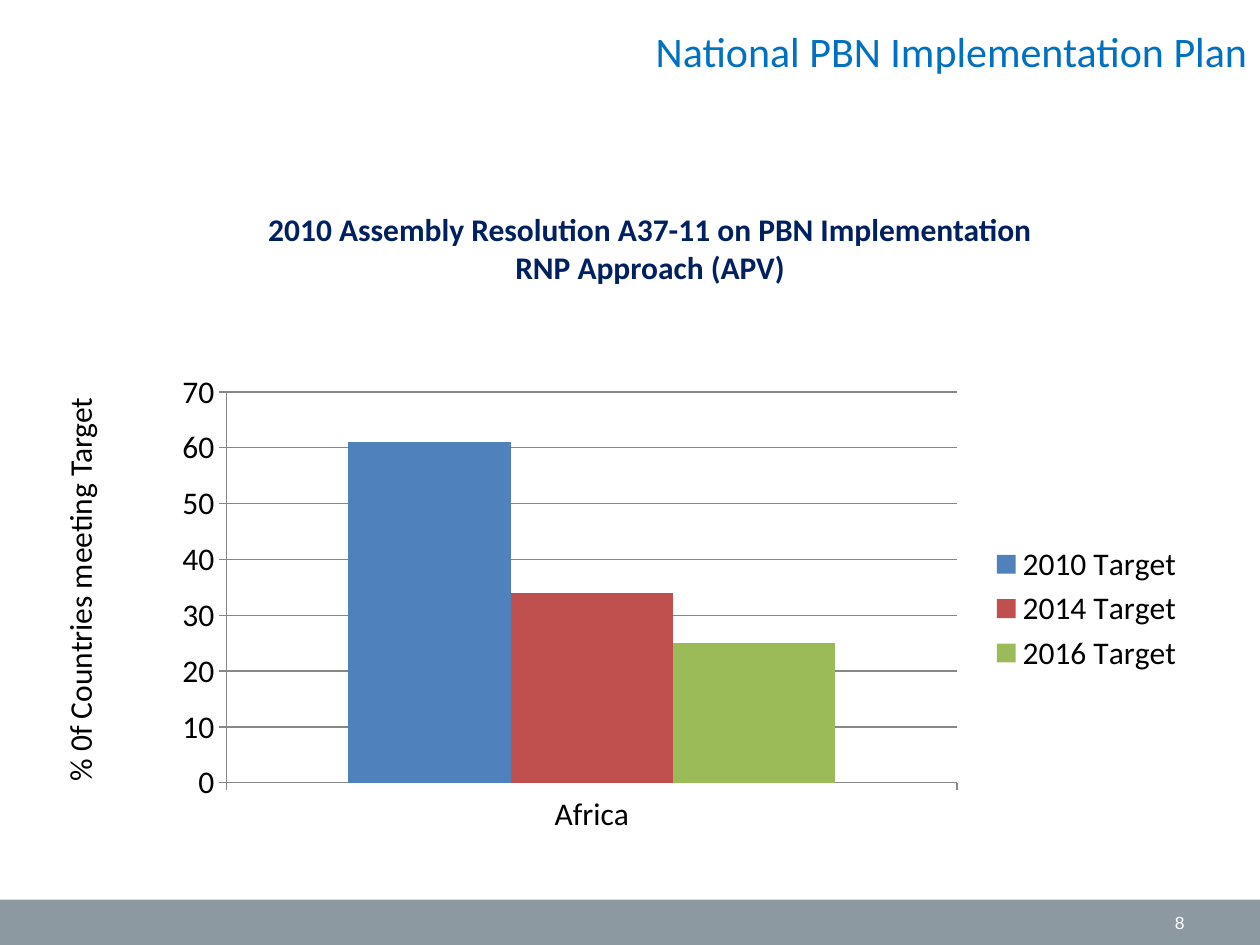
from lxml import etree
from pptx import Presentation
from pptx.chart.data import CategoryChartData as ChartData
from pptx.dml.color import RGBColor as RGB
from pptx.enum.chart import XL_CHART_TYPE as Kind, XL_LEGEND_POSITION as Side
from pptx.enum.chart import XL_TICK_MARK as Tick
from pptx.enum.shapes import MSO_SHAPE as Shape
from pptx.enum.text import MSO_ANCHOR as Anchor, PP_ALIGN as Align
from pptx.util import Inches, Pt

COLORS = {
    "title": "0070C0", "head": "002060", "text": "000000", "bar": "8C99A1",
    "white": "FFFFFF", "grid": "878787",
}
TARGETS = [
    ("2010 Target", 61, "4F81BD"),
    ("2014 Target", 34, "C0504D"),
    ("2016 Target", 25, "9BBB59"),
]
PLOT = {"x": 0.07, "y": 0.04, "w": 0.7, "h": 0.83}
CHART_NS = "http://schemas.openxmlformats.org/drawingml/2006/chart"


def color(name):
    return RGB.from_string(COLORS[name])


def style(font, size, name, face="Calibri", bold=False):
    font.size, font.name, font.bold = Pt(size), face, bold
    font.color.rgb = color(name)


def write(shape, lines, size, name, align, anchor=Anchor.TOP, wrap=True, **look):
    """Fill a shape with equally styled lines."""
    frame = shape.text_frame
    frame.text = "\n".join(lines)
    frame.word_wrap, frame.vertical_anchor = wrap, anchor
    for para in frame.paragraphs:
        para.alignment = align
        for run in para.runs:
            style(run.font, size, name, **look)


def add_title(slide, box):
    title = slide.shapes.title
    title.left, title.top, title.width, title.height = map(Inches, box)
    write(title, ["National PBN Implementation Plan"], 24, "title", Align.RIGHT)


def add_footer(slide, box):
    left, top, width, height = map(Inches, box)
    bar = slide.shapes.add_shape(Shape.RECTANGLE, left, top, width, height)
    bar.shadow.inherit = False
    bar.fill.solid()
    bar.fill.fore_color.rgb = color("bar")
    bar.line.fill.background()
    wide = Inches(2.33)
    number = slide.shapes.add_textbox(
        left + width - Inches(0.5) - wide, top, wide, height)
    write(number, ["8"], 10, "white", Align.RIGHT, Anchor.MIDDLE, face="Arial")


def add_heading(slide, box):
    head = slide.shapes.add_textbox(*map(Inches, box))
    lines = ["2010 Assembly Resolution A37-11 on PBN Implementation",
             "RNP Approach (APV)"]
    write(head, lines, 18, "head", Align.CENTER, bold=True)


def add_label(slide, box):
    label = slide.shapes.add_textbox(*map(Inches, box))
    label.rotation = 270
    write(label, ["% 0f Countries meeting Target"], 18, "text", Align.LEFT, wrap=False)


def place_plot(chart):
    """Fix the inner plot area as fractions of the chart."""
    area = chart.plots[0]._element.getparent()
    tag = f"{{{CHART_NS}}}"
    for old in area.findall(tag + "layout"):
        area.remove(old)
    layout = etree.Element(tag + "layout")
    manual = etree.SubElement(layout, tag + "manualLayout")
    parts = {"layoutTarget": "inner", "xMode": "edge", "yMode": "edge", **PLOT}
    for key, val in parts.items():
        etree.SubElement(manual, tag + key).set("val", str(val))
    area.insert(0, layout)


def add_chart(slide, box):
    data = ChartData()
    data.categories = ["Africa"]
    for name, value, _ in TARGETS:
        data.add_series(name, [value])
    chart = slide.shapes.add_chart(
        Kind.COLUMN_CLUSTERED, *map(Inches, box), data).chart
    chart.has_title = False
    style(chart.font, 18, "text")
    chart.has_legend = True
    chart.legend.position = Side.RIGHT
    chart.legend.include_in_layout = False

    plot = chart.plots[0]
    plot.gap_width, plot.overlap = 150, 0
    plot.vary_by_categories = False
    for series, (_, _, fill) in zip(plot.series, TARGETS):
        series.format.fill.solid()
        series.format.fill.fore_color.rgb = RGB.from_string(fill)

    scale = chart.value_axis
    scale.minimum_scale, scale.maximum_scale, scale.major_unit = 0, 70, 10
    scale.has_major_gridlines = True
    for axis in (chart.category_axis, scale):
        axis.major_tick_mark = Tick.OUTSIDE
        axis.minor_tick_mark = Tick.NONE
    for part in (chart.category_axis, scale, scale.major_gridlines):
        part.format.line.color.rgb = color("grid")
        part.format.line.width = Pt(0.75)
    place_plot(chart)


def main():
    deck = Presentation()
    deck.slide_width, deck.slide_height = Inches(10), Inches(7.5)
    slide = deck.slides.add_slide(deck.slide_layouts[5])
    add_footer(slide, (0, 7.14, 10, 0.36))
    add_title(slide, (0, 0.15, 10, 0.67))
    add_chart(slide, (1.22, 2.96, 8.28, 3.74))
    add_label(slide, (-1.04, 4.43, 3.34, 0.4))
    add_heading(slide, (1.46, 1.62, 7.4, 0.71))
    deck.save("out.pptx")


if __name__ == "__main__":
    main()
